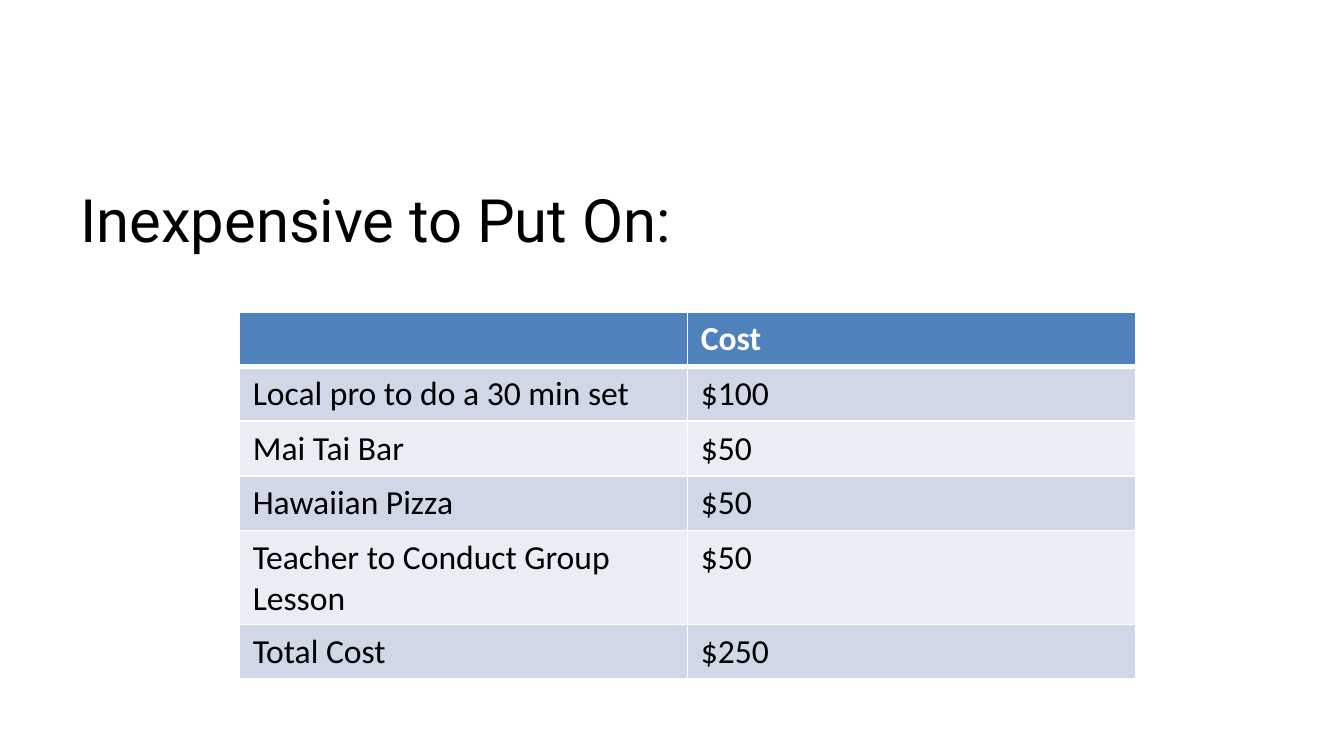
from lxml import etree
from pptx import Presentation
from pptx.dml.color import RGBColor
from pptx.enum import text
from pptx.oxml.ns import qn
from pptx.util import Emu, Pt

PX = 9525  # EMU per px, 96 px to the inch

THEME = {
    "title_font": "Roboto", "title_size": 32,
    "table_font": "Calibri", "table_size": 18,
    "ink": "000000", "white": "FFFFFF",
    "header": "4F81BD", "bands": ("D0D8E8", "E9EDF4"),
}


def px(n):
    return Emu(n * PX)


def write(tf, content, *, font, size, color, bold=False):
    tf.word_wrap = True
    tf.vertical_anchor = text.MSO_ANCHOR.TOP
    p = tf.paragraphs[0]
    p.alignment = text.PP_ALIGN.LEFT
    r = p.add_run()
    r.text = content
    r.font.name = font
    r.font.size = Pt(size)
    r.font.bold = bold
    r.font.color.rgb = RGBColor.from_string(color)


prs = Presentation()
prs.slide_width, prs.slide_height = px(960), px(540)
s = prs.slides.add_slide(prs.slide_layouts[6])

# Heading
sp = s.shapes.add_textbox(px(48), px(126), px(864), px(356))
write(sp.text_frame, "Inexpensive to Put On:", font=THEME["title_font"],
      size=THEME["title_size"], color=THEME["ink"])

# Cost table
rows = [
    ("", "Cost"),
    ("Local pro to do a 30 min set", "$100"),
    ("Mai Tai Bar", "$50"),
    ("Hawaiian Pizza", "$50"),
    ("Teacher to Conduct Group Lesson", "$50"),
    ("Total Cost", "$250"),
]
ROW_H, COL_W = 39, 320
table = s.shapes.add_table(len(rows), 2, px(171), px(223),
                           px(2 * COL_W), px(ROW_H * len(rows))).table
for col in table.columns:
    col.width = px(COL_W)

for i, row in enumerate(rows):
    table.rows[i].height = px(ROW_H)
    is_header = i == 0
    fill = THEME["header"] if is_header else THEME["bands"][(i - 1) % 2]
    # White rules, with a heavier one under the header
    widths = {"lnL": 1, "lnR": 1, "lnT": 3 if i == 1 else 1, "lnB": 3 if is_header else 1}
    for j, content in enumerate(row):
        cell = table.cell(i, j)
        tc_pr = cell._tc.get_or_add_tcPr()
        for side, width in widths.items():
            ln = etree.SubElement(tc_pr, qn(f"a:{side}"), w=str(Pt(width)))
            solid = etree.SubElement(ln, qn("a:solidFill"))
            etree.SubElement(solid, qn("a:srgbClr"), val=THEME["white"])
        cell.fill.solid()
        cell.fill.fore_color.rgb = RGBColor.from_string(fill)
        if content:
            write(cell.text_frame, content, font=THEME["table_font"],
                  size=THEME["table_size"], bold=is_header,
                  color=THEME["white"] if is_header else THEME["ink"])

prs.save("out.pptx")
